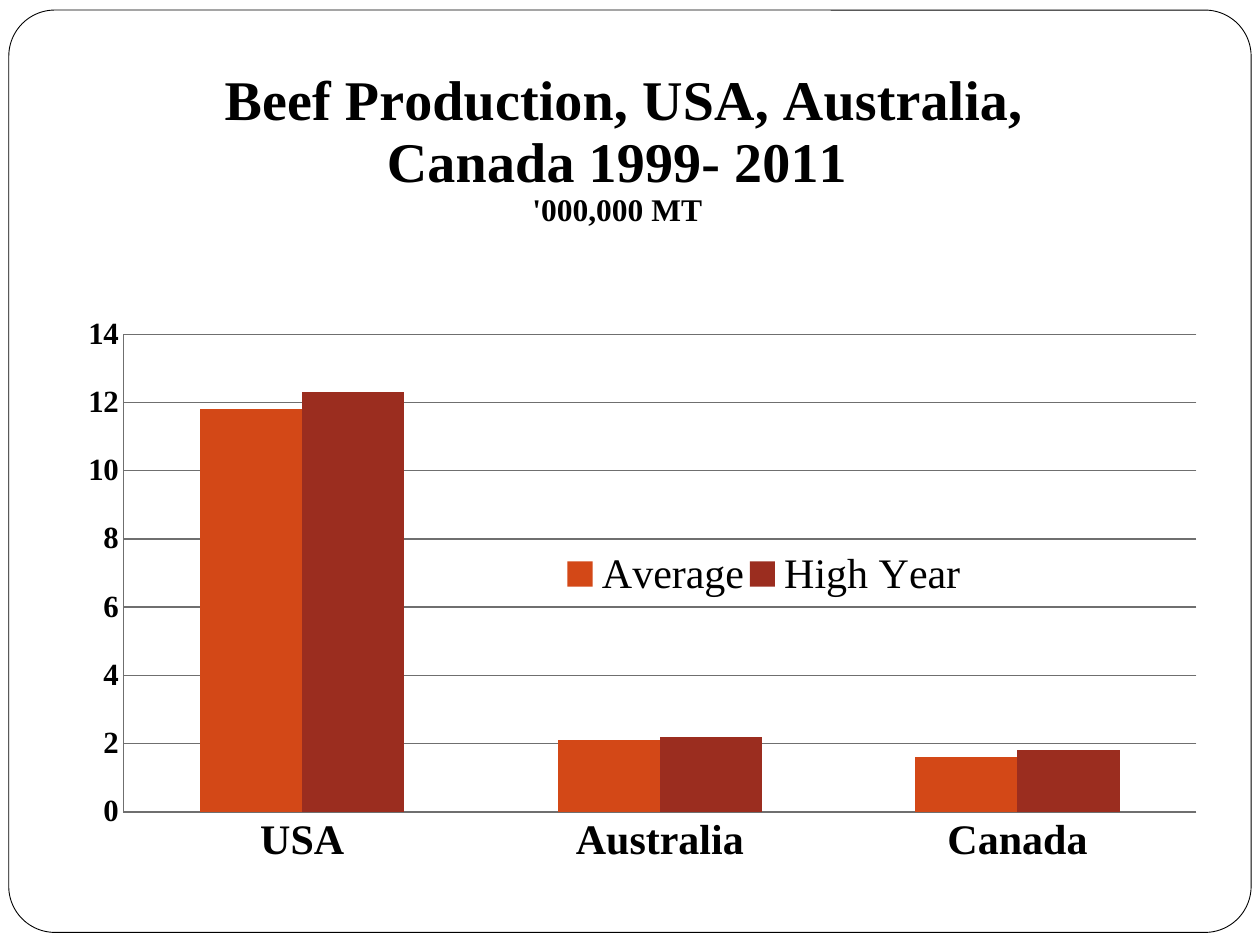
from lxml.etree import SubElement
from pptx import Presentation
from pptx.chart.data import CategoryChartData
from pptx.dml.color import RGBColor
from pptx.enum.chart import XL_CHART_TYPE, XL_LEGEND_POSITION, XL_TICK_MARK
from pptx.enum.shapes import MSO_SHAPE
from pptx.oxml import parse_xml
from pptx.oxml.ns import nsdecls, qn
from pptx.util import Inches, Pt

COLORS = {
    "paper": "FFFFFF",
    "ink": "000000",
    "grid": "6F6F6F",
    "average": "D34817",
    "high_year": "9B2D1F",
}
FONT = "Times New Roman"
CATEGORIES = ["USA", "Australia", "Canada"]
SERIES = [
    ("Average", [11.8, 2.1, 1.6], "average"),
    ("High Year", [12.3, 2.2, 1.8], "high_year"),
]
TITLE_LINES = [
    (" Beef Production, USA, Australia, Canada 1999- 2011", 32),
    ("'000,000 MT", 18),
]
FRAME_BOX = (0.07, 0.08, 9.86, 7.32)
CHART_BOX = (0.28, 0, 9.72, 7.29)


def color(name):
    return RGBColor.from_string(COLORS[name])


def set_values(target, values):
    for name, value in values.items():
        setattr(target, name, value)


def format_font(font, size, bold):
    set_values(font, {"name": FONT, "size": Pt(size), "bold": bold})
    font.color.rgb = color("ink")


def format_line(line, name, width):
    line.color.rgb = color(name)
    line.width = Pt(width)


def set_layout(element, values):
    for old_layout in element.findall(qn("c:layout")):
        element.remove(old_layout)
    layout = parse_xml(f"<c:layout {nsdecls('c')}/>")
    manual = SubElement(layout, qn("c:manualLayout"))
    for name, value in values.items():
        SubElement(manual, qn(f"c:{name}")).set("val", str(value))
    overlay = element.find(qn("c:overlay"))
    if overlay is None:
        element.insert(0, layout)
    else:
        overlay.addprevious(layout)


def add_frame(slide, box):
    shape = slide.shapes.add_shape(
        MSO_SHAPE.ROUNDED_RECTANGLE, *(Inches(length) for length in box)
    )
    shape.adjustments[0] = 0.05
    shape.shadow.inherit = False
    shape.fill.solid()
    shape.fill.fore_color.rgb = color("paper")
    format_line(shape.line, "ink", 0.5)


def add_title(chart):
    chart.has_title = True
    text_frame = chart.chart_title.text_frame
    for index, (text, size) in enumerate(TITLE_LINES):
        paragraph = text_frame.add_paragraph() if index else text_frame.paragraphs[0]
        format_font(paragraph.font, size, True)
        run = paragraph.add_run()
        run.text = text
        format_font(run.font, size, True)
    set_layout(
        chart.chart_title._element,
        {"xMode": "edge", "yMode": "edge", "x": 0.14, "y": 0.07},
    )


def format_axes(chart):
    for axis, size in ((chart.category_axis, 24), (chart.value_axis, 17.6)):
        set_values(
            axis,
            {"major_tick_mark": XL_TICK_MARK.NONE, "minor_tick_mark": XL_TICK_MARK.NONE},
        )
        format_font(axis.tick_labels.font, size, True)
        format_line(axis.format.line, "grid", 0.75)
    set_values(
        chart.value_axis,
        {"minimum_scale": 0, "maximum_scale": 14, "major_unit": 2, "has_major_gridlines": True},
    )
    format_line(chart.value_axis.major_gridlines.format.line, "grid", 0.75)


def add_legend(chart):
    chart.has_legend = True
    set_values(
        chart.legend,
        {"position": XL_LEGEND_POSITION.RIGHT, "include_in_layout": False},
    )
    format_font(chart.legend.font, 24, False)
    set_layout(
        chart.legend._element,
        {"xMode": "edge", "yMode": "edge", "x": 0.43, "y": 0.59, "w": 0.33, "h": 0.07},
    )


def add_beef_chart(slide, box):
    data = CategoryChartData()
    data.categories = CATEGORIES
    for name, values, _ in SERIES:
        data.add_series(name, values)
    chart = slide.shapes.add_chart(
        XL_CHART_TYPE.COLUMN_CLUSTERED, *(Inches(length) for length in box), data
    ).chart
    format_font(chart.font, 10, False)
    plot = chart.plots[0]
    set_values(plot, {"gap_width": 150, "overlap": 0, "vary_by_categories": False})
    for series, (_, _, fill) in zip(plot.series, SERIES):
        series.format.fill.solid()
        series.format.fill.fore_color.rgb = color(fill)
    add_title(chart)
    format_axes(chart)
    add_legend(chart)
    set_layout(
        chart._chartSpace.chart.plotArea,
        {
            "layoutTarget": "inner", "xMode": "edge", "yMode": "edge",
            "x": 0.072, "y": 0.364, "w": 0.876, "h": 0.52,
        },
    )


def main():
    presentation = Presentation()
    set_values(presentation, {"slide_width": Inches(10), "slide_height": Inches(7.5)})
    slide = presentation.slides.add_slide(presentation.slide_layouts[6])
    add_frame(slide, FRAME_BOX)
    add_beef_chart(slide, CHART_BOX)
    presentation.save("out.pptx")


if __name__ == "__main__":
    main()
